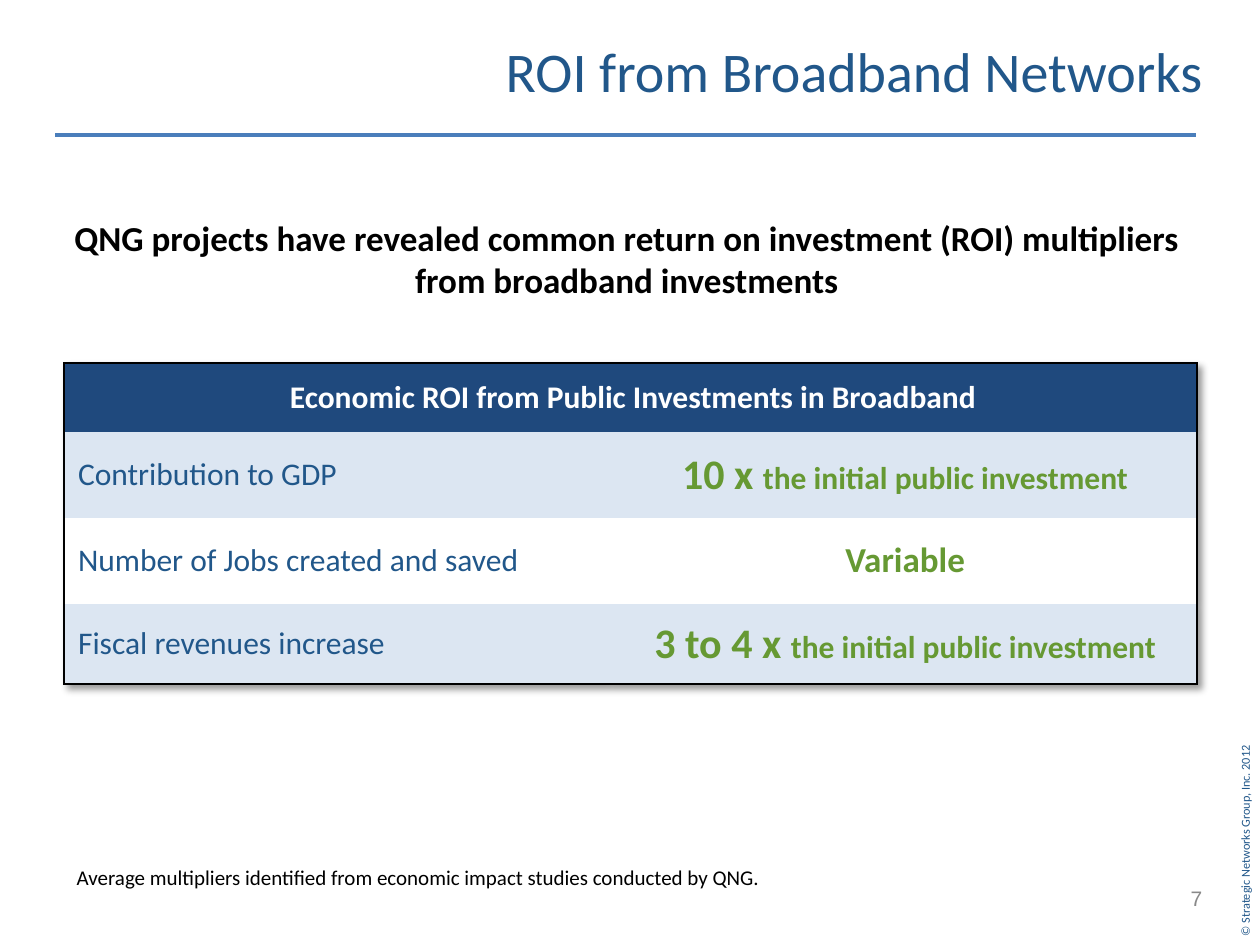
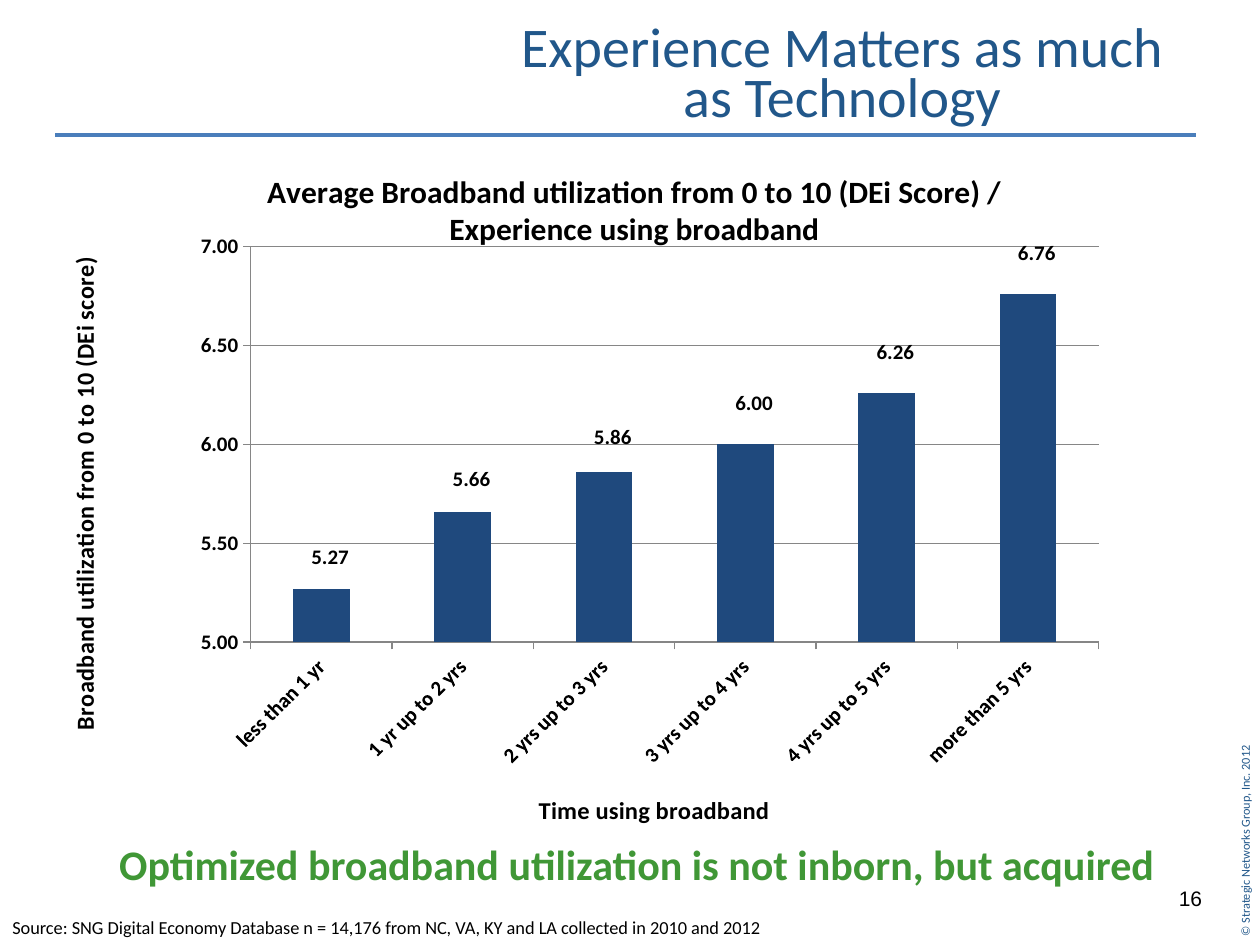
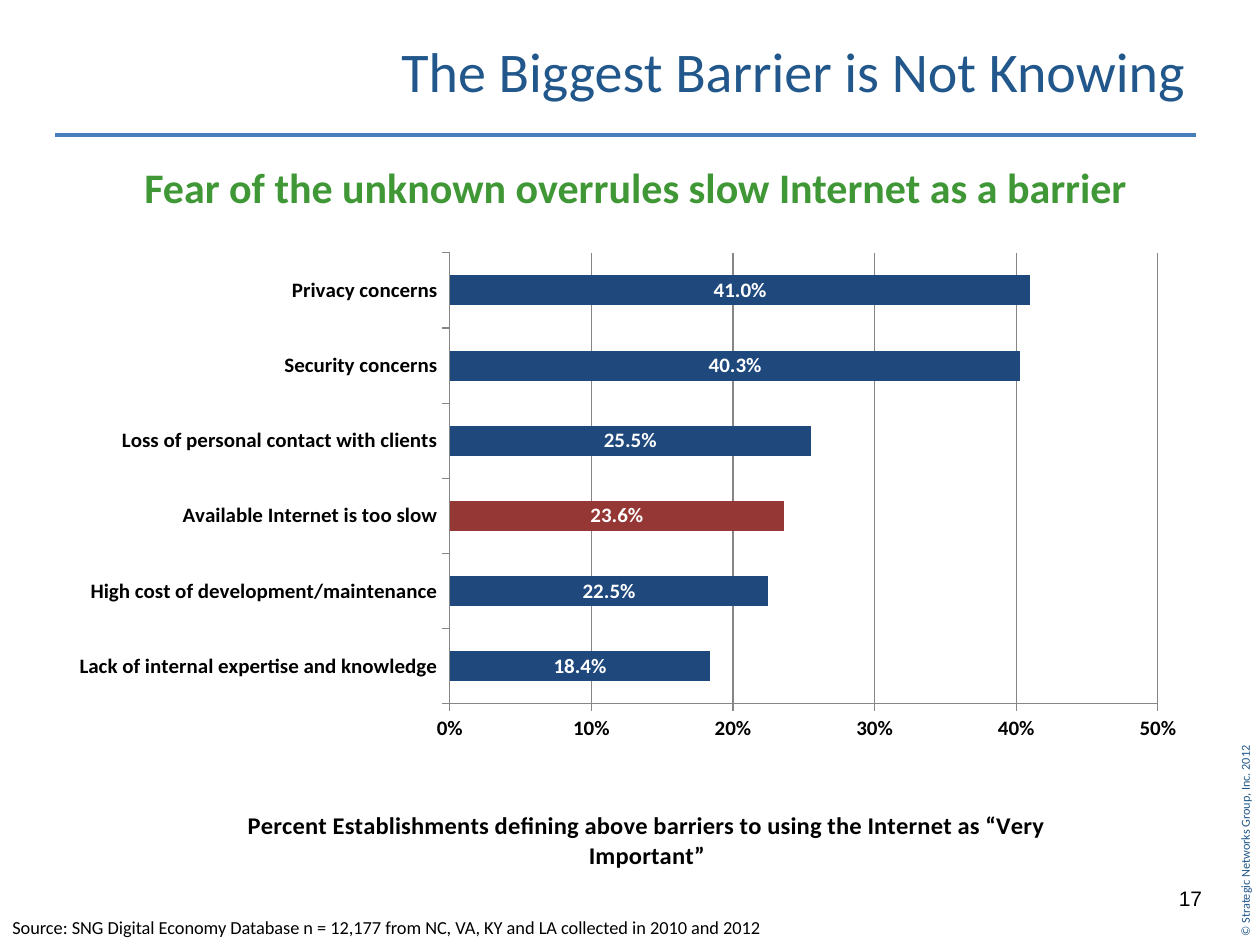
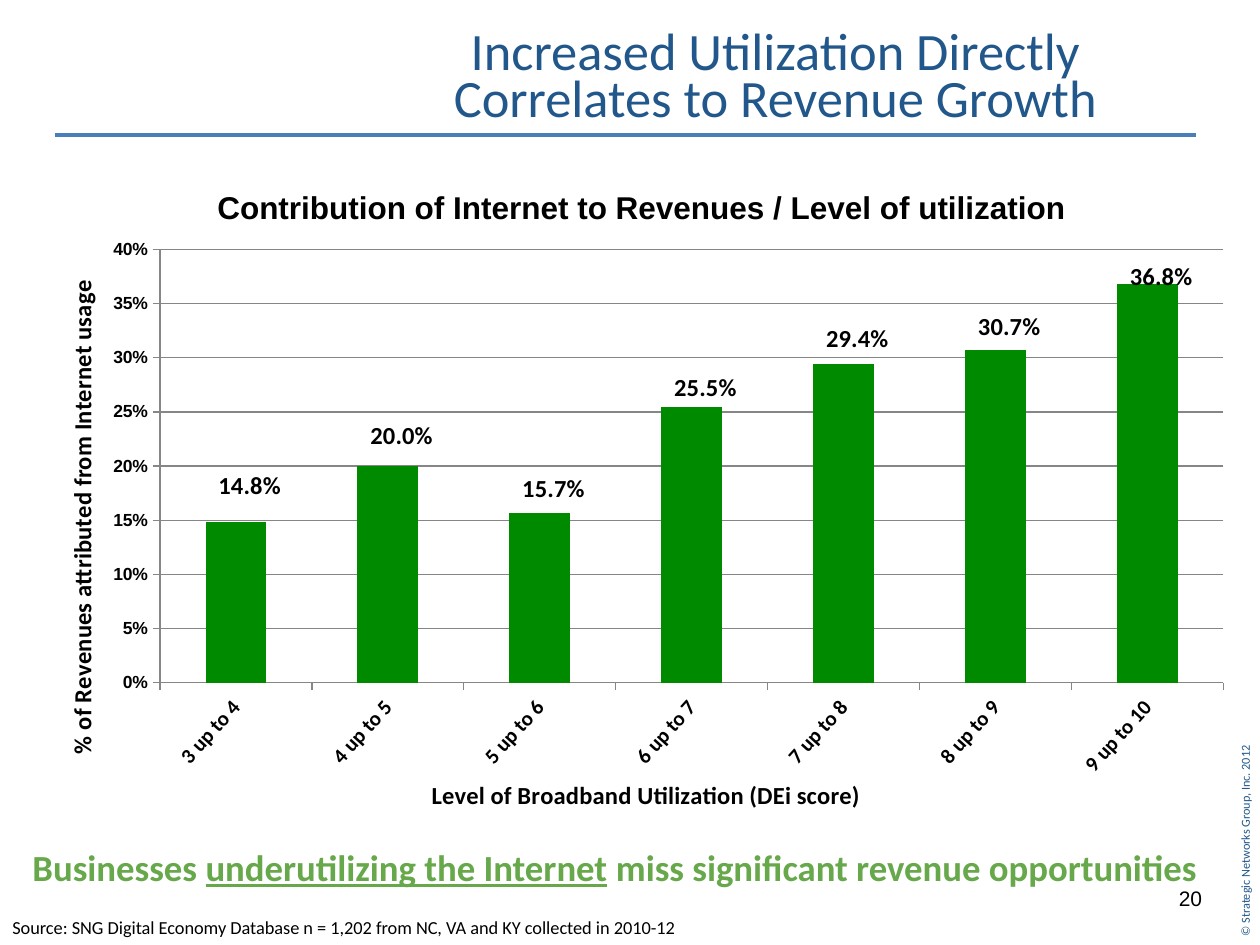
from dataclasses import dataclass

from lxml import etree
from pptx import Presentation
from pptx.chart.data import CategoryChartData
from pptx.dml.color import RGBColor
from pptx.enum.chart import XL_CHART_TYPE as ChartType
from pptx.enum.chart import XL_LABEL_POSITION as LabelPosition
from pptx.enum.chart import XL_TICK_MARK as TickMark
from pptx.enum.shapes import MSO_CONNECTOR as Connector
from pptx.enum.text import MSO_ANCHOR as Anchor
from pptx.enum.text import MSO_AUTO_SIZE as AutoSize
from pptx.enum.text import PP_ALIGN as Align
from pptx.oxml import parse_xml
from pptx.oxml.ns import nsdecls, qn
from pptx.util import Inches, Pt


@dataclass(frozen=True)
class Theme:
    font: str = "Calibri"
    plain_font: str = "Arial"
    title_blue: str = "21578A"
    rule_blue: str = "4A7EBB"
    navy: str = "1F497D"
    pale_blue: str = "DCE6F2"
    red: str = "953735"
    bar_green: str = "008A00"
    message_green: str = "409736"
    closing_green: str = "66A84A"
    value_green: str = "669933"
    page_grey: str = "898989"
    axis_grey: str = "868686"
    black: str = "000000"
    white: str = "FFFFFF"
    title: float = 32
    long_title: float = 30
    message: float = 24
    closing: float = 21
    lead: float = 20
    heading: float = 18
    axis_title: float = 14
    small: float = 12
    source: float = 10.5
    chart: float = 10
    copyright: float = 7


THEME = Theme()
NO_TABLE_STYLE = "{2D5ABB26-0587-4C30-8999-92F81FD0307C}"


@dataclass
class BarChartSpec:
    """Content of a bar chart; positions are inches inside the chart frame."""
    categories: tuple
    values: tuple
    color: str
    plot_area: tuple
    number_format: str
    axis_format: str
    axis_range: tuple
    value_title: str
    value_title_at: tuple
    category_title: str = ""
    category_title_at: tuple = ()
    title: str = ""
    title_at: tuple = ()
    title_font: str = THEME.font
    value_font: str = THEME.font
    value_size: float = THEME.small
    label_size: float = THEME.small
    label_color: str = THEME.black
    label_gaps: tuple = ()
    label_shift: float = 0
    label_angle: int = 0
    chart_type: int = ChartType.COLUMN_STACKED


def style_font(font, size, color, bold=False, name=THEME.font):
    font.size = Pt(size)
    font.name = name
    font.bold = bold
    font.color.rgb = RGBColor.from_string(color)


def place(shape, box):
    shape.left, shape.top, shape.width, shape.height = map(Inches, box)


def add_text(slide, box, lines, size, color=THEME.black, bold=False,
             align=Align.LEFT, spacing=None, name=THEME.font):
    """Add a box with one paragraph per line; a line may be a list of runs."""
    shape = slide.shapes.add_textbox(*map(Inches, box))
    frame = shape.text_frame
    frame.word_wrap = True
    for index, line in enumerate(lines):
        paragraph = frame.paragraphs[0] if index == 0 else frame.add_paragraph()
        for text in [line] if isinstance(line, str) else line:
            paragraph.add_run().text = text
        paragraph.alignment = align
        paragraph.line_spacing = spacing
        style_font(paragraph.font, size, color, bold, name)
    return shape


def add_shared_layout_parts(slide):
    """Put the title rule and the copyright line on the slide's layout."""
    rule = slide.shapes.add_connector(
        Connector.STRAIGHT, Inches(0.44), Inches(1.07), Inches(9.49), Inches(1.07))
    rule.line.color.rgb = RGBColor.from_string(THEME.rule_blue)
    rule.line.width = Pt(2.25)
    etree.SubElement(rule.element.spPr, qn("a:effectLst"))

    notice = add_text(slide, (8.99, 6.47, 1.78, 0.26),
                      ["© Strategic Networks Group, Inc. 2012"],
                      THEME.copyright, THEME.title_blue)
    notice.rotation = 270
    notice.text_frame.word_wrap = False
    notice.text_frame.vertical_anchor = Anchor.MIDDLE
    notice.text_frame.margin_left = Inches(0.06)
    for shape in (rule, notice):
        slide.slide_layout.shapes.element.append(shape.element)


def add_titled_slide(presentation, title, box, number, align=Align.RIGHT,
                     size=THEME.title, anchor=Anchor.MIDDLE,
                     number_color=THEME.black):
    slide = presentation.slides.add_slide(presentation.slide_layouts[5])
    shape = slide.shapes.title
    place(shape, box)
    frame = shape.text_frame
    frame.text = title
    frame.auto_size = AutoSize.NONE
    frame.vertical_anchor = anchor
    paragraph = frame.paragraphs[0]
    paragraph.alignment = align
    paragraph.line_spacing = 0.75
    style_font(paragraph.font, size, THEME.title_blue)
    add_text(slide, (8.61, 6.98, 1.03, 0.45), [str(number)], THEME.small,
             number_color, align=Align.RIGHT, name=THEME.plain_font)
    return slide


def add_message(slide, box, text):
    add_text(slide, box, [text], THEME.message, THEME.message_green, True,
             Align.CENTER, 0.85)


def add_source(slide, sample):
    add_text(slide, (0, 7.22, 7.57, 0.28),
             [f"Source: SNG Digital Economy Database {sample}"], THEME.source)


def set_borders(cell, sides):
    properties = cell._tc.get_or_add_tcPr()
    borders = [side for side in "LRTB" if side in sides]
    for index, side in enumerate(borders):
        properties.insert(index, parse_xml(
            f'<a:ln{side} {nsdecls("a")} w="12700"><a:solidFill>'
            f'<a:srgbClr val="{THEME.black}"/></a:solidFill></a:ln{side}>'))


def fill_cell(cell, runs, fill, color, bold, align, borders):
    """Write (text, size) runs into a table cell and style it."""
    cell.fill.solid()
    cell.fill.fore_color.rgb = RGBColor.from_string(fill)
    cell.vertical_anchor = Anchor.MIDDLE
    cell.margin_left = cell.margin_right = Inches(0.07)
    cell.margin_top = cell.margin_bottom = 0
    paragraph = cell.text_frame.paragraphs[0]
    paragraph._p.get_or_add_pPr().set("marL", str(Inches(0.04)))
    paragraph.alignment = align
    paragraph.space_after = Pt(2)
    for text, size in runs:
        run = paragraph.add_run()
        run.text = text
        style_font(run.font, size, color, bold)
    set_borders(cell, borders)


def add_roi_table(slide, box, heading, rows):
    table = slide.shapes.add_table(len(rows) + 1, 2, *map(Inches, box)).table
    properties = table._tbl.tblPr
    properties.find(qn("a:tableStyleId")).text = NO_TABLE_STYLE
    table.first_row = table.horz_banding = False
    properties.insert(0, parse_xml(
        f'<a:effectLst {nsdecls("a")}><a:outerShdw blurRad="50800" dist="38100" '
        'dir="2700000" algn="tl" rotWithShape="0"><a:prstClr val="black">'
        '<a:alpha val="40000"/></a:prstClr></a:outerShdw></a:effectLst>'))
    for column, width in zip(table.columns, (4.32, 4.67)):
        column.width = Inches(width)
    for row, height in zip(table.rows, (0.55, 0.68, 0.68, 0.64)):
        row.height = Inches(height)

    table.cell(0, 0).merge(table.cell(0, 1))
    fill_cell(table.cell(0, 0), [(heading, THEME.heading)], THEME.navy,
              THEME.white, True, Align.CENTER, "LRT")
    set_borders(table.cell(0, 1), "RT")
    for index, (label, runs) in enumerate(rows, 1):
        fill = THEME.pale_blue if index % 2 else THEME.white
        bottom = "B" if index == len(rows) else ""
        fill_cell(table.cell(index, 0), [(label, THEME.heading)], fill,
                  THEME.title_blue, False, Align.LEFT, "L" + bottom)
        fill_cell(table.cell(index, 1), runs, fill, THEME.value_green, True,
                  Align.CENTER, "R" + bottom)


def manual_layout(position, box, inner=False, offset=False):
    """Make a c:layout from inches (x, y) or (x, y, width, height) in the box."""
    parts = ['<c:layoutTarget val="inner"/>'] if inner else []
    if not offset:
        parts += ['<c:xMode val="edge"/>', '<c:yMode val="edge"/>']
    parts += [f'<c:{key} val="{length / whole:.4f}"/>'
              for key, length, whole in zip("xywh", position, box[2:] * 2)]
    return parse_xml(f'<c:layout {nsdecls("c")}><c:manualLayout>{"".join(parts)}'
                     '</c:manualLayout></c:layout>')


def set_chart_title(title, text, position, box, size, name=THEME.font):
    """Fill a chart or axis title and put its top left corner at position."""
    title.text_frame.text = text
    for paragraph in title.text_frame.paragraphs:
        style_font(paragraph.font, size, THEME.black, True, name)
    element = title._element
    for layout in element.findall(qn("c:layout")):
        element.remove(layout)
    element.find(qn("c:tx")).addnext(manual_layout(position, box))


def style_axis(axis, size, name):
    axis.major_tick_mark = TickMark.OUTSIDE
    style_font(axis.tick_labels.font, size, THEME.black, True, name)
    lines = [axis.format.line]
    if axis.has_major_gridlines:
        lines.append(axis.major_gridlines.format.line)
    for line in lines:
        line.color.rgb = RGBColor.from_string(THEME.axis_grey)
        line.width = Pt(0.75)


def hide_leader_lines(labels):
    """Switch off the lines from moved labels to their bars."""
    element = labels._element
    for old in element.findall(qn("c:showLeaderLines")):
        element.remove(old)
    element.append(parse_xml(f'<c:showLeaderLines {nsdecls("c")} val="0"/>'))
    element.append(parse_xml(
        f'<c:extLst {nsdecls("c")}><c:ext uri="{{CE6537A1-D6FC-4f65-9D91-7224C49458BB}}" '
        'xmlns:c15="http://schemas.microsoft.com/office/drawing/2012/chart">'
        '<c15:showLeaderLines val="0"/></c:ext></c:extLst>'))


def lift_labels(series, spec, box):
    """Move each label from the middle of its bar to its gap above the bar."""
    low, high, _ = spec.axis_range
    for index, (value, gap) in enumerate(zip(spec.values, spec.label_gaps)):
        label = series.points[index].data_label
        label.position = LabelPosition.CENTER
        style_font(label.font, spec.label_size, spec.label_color, True)
        half_bar = (value - low) / (high - low) * spec.plot_area[3] / 2
        offset = (spec.label_shift, -half_bar - gap)
        element = series.data_labels._element.findall(qn("c:dLbl"))[index]
        element.find(qn("c:idx")).addnext(manual_layout(offset, box, offset=True))


def add_bar_chart(slide, box, spec):
    data = CategoryChartData()
    data.categories = spec.categories
    data.add_series("Series 1", spec.values)
    chart = slide.shapes.add_chart(spec.chart_type, *map(Inches, box), data).chart
    chart.has_legend = False
    style_font(chart.font, THEME.chart, THEME.black, name=THEME.plain_font)
    chart.has_title = bool(spec.title)
    if spec.title:
        set_chart_title(chart.chart_title, spec.title, spec.title_at, box,
                        THEME.heading, spec.title_font)

    plot = chart.plots[0]
    plot.gap_width, plot.overlap = 150, 100
    plot.vary_by_categories = False
    plot_area = plot._element.getparent()
    for layout in plot_area.findall(qn("c:layout")):
        plot_area.remove(layout)
    plot_area.insert(0, manual_layout(spec.plot_area, box, inner=True))

    value_axis, category_axis = chart.value_axis, chart.category_axis
    value_axis.minimum_scale, value_axis.maximum_scale, value_axis.major_unit = spec.axis_range
    value_axis.has_major_gridlines = True
    value_axis.tick_labels.number_format = spec.axis_format
    value_axis.tick_labels.number_format_is_linked = False
    style_axis(value_axis, spec.value_size, spec.value_font)
    style_axis(category_axis, THEME.small, THEME.font)
    set_chart_title(value_axis.axis_title, spec.value_title, spec.value_title_at,
                    box, THEME.axis_title)
    if spec.category_title:
        set_chart_title(category_axis.axis_title, spec.category_title,
                        spec.category_title_at, box, THEME.axis_title)
    if spec.label_angle:
        body = category_axis._element.find(qn("c:txPr")).find(qn("a:bodyPr"))
        body.set("rot", str(spec.label_angle * 60000))
        body.set("vert", "horz")

    series = plot.series[0]
    series.format.fill.solid()
    series.format.fill.fore_color.rgb = RGBColor.from_string(spec.color)
    labels = series.data_labels
    labels.show_value = True
    labels.number_format = spec.number_format
    labels.number_format_is_linked = False
    style_font(labels.font, spec.label_size, spec.label_color, True)
    lift_labels(series, spec, box)
    hide_leader_lines(labels)
    return chart


def add_roi_slide(presentation):
    slide = add_titled_slide(presentation, "ROI from Broadband Networks",
                             (2.59, 0.26, 7.06, 0.71), 7,
                             number_color=THEME.page_grey)
    add_shared_layout_parts(slide)
    add_text(slide, (0.41, 1.67, 9.13, 0.77),
             ["QNG projects have revealed common return on investment (ROI) multipliers",
              "from broadband investments"], THEME.lead, bold=True, align=Align.CENTER)
    investment = ("the initial public investment", THEME.heading)
    add_roi_table(slide, (0.51, 2.88, 8.99, 2.55),
                  "Economic ROI from Public Investments in Broadband", [
                      ("Contribution to GDP", [("10 x ", THEME.message), investment]),
                      ("Number of Jobs created and saved", [("Variable", THEME.lead)]),
                      ("Fiscal revenues increase", [("3 to 4 x ", THEME.message), investment]),
                  ])
    add_text(slide, (0.51, 6.81, 6.72, 0.3),
             ["Average multipliers identified from economic impact studies conducted by QNG."],
             THEME.small)


def add_experience_slide(presentation):
    slide = add_titled_slide(presentation, "Experience Matters as much as Technology",
                             (3.87, 0.26, 5.63, 0.71), 16, Align.CENTER)
    add_bar_chart(slide, (0.46, 1.16, 9.2, 5.45), BarChartSpec(
        categories=("less than 1 yr", "1 yr up to 2 yrs", "2 yrs up to 3 yrs",
                    "3 yrs up to 4 yrs", "4 yrs up to 5 yrs", "more than 5 yrs"),
        values=(5.27, 5.66, 5.86, 6, 6.26, 6.76),
        color=THEME.navy,
        plot_area=(1.53, 0.81, 6.73, 3.19),
        number_format="#0.00", axis_format="#0.00", axis_range=(5, 7, 0.5),
        title="Average Broadband utilization from 0 to 10 (DEi Score) /\n"
              "Experience using broadband",
        title_at=(1.63, 0.17),
        value_title="Broadband utilization from 0 to 10 (DEi score)",
        value_title_at=(0.04, 0.92),
        category_title="Time using broadband", category_title_at=(3.78, 5.18),
        label_gaps=(0.25, 0.26, 0.28, 0.33, 0.33, 0.33), label_shift=0.07,
        label_angle=-45))
    add_source(slide, "n = 14,176 from NC, VA, KY and LA collected in 2010 and 2012")
    add_message(slide, (0.46, 6.67, 9.19, 0.59),
                "Optimized broadband utilization is not inborn, but acquired")


def add_barrier_slide(presentation):
    slide = add_titled_slide(presentation, "The Biggest Barrier is Not Knowing",
                             (2.65, 0.26, 6.86, 0.71), 17)
    categories = ("Lack of internal expertise and knowledge",
                  "High cost of development/maintenance",
                  "Available Internet is too slow",
                  "Loss of personal contact with clients",
                  "Security concerns", "Privacy concerns")
    chart = add_bar_chart(slide, (0.45, 1.91, 9.06, 5.06), BarChartSpec(
        categories=categories,
        values=(0.184, 0.225, 0.236, 0.255, 0.403, 0.41),
        color=THEME.navy,
        plot_area=(3.12, 0.1, 5.62, 3.66),
        number_format="0.0%", axis_format="0%", axis_range=(0, 0.5, 0.1),
        value_title="Percent Establishments defining above barriers to using "
                    "the Internet as “Very Important”",
        value_title_at=(1.48, 4.58),
        label_color=THEME.white, chart_type=ChartType.BAR_STACKED))
    slow_internet = chart.plots[0].series[0].points[
        categories.index("Available Internet is too slow")]
    slow_internet.format.fill.solid()
    slow_internet.format.fill.fore_color.rgb = RGBColor.from_string(THEME.red)
    add_source(slide, "n = 12,177 from NC, VA, KY and LA collected in 2010 and 2012")
    add_message(slide, (0.45, 1.29, 9.19, 0.98),
                "Fear of the unknown overrules slow Internet as a barrier")


def add_revenue_slide(presentation):
    slide = add_titled_slide(
        presentation, "Increased Utilization Directly\vCorrelates to Revenue Growth",
        (2.81, 0.21, 6.69, 0.71), 20, Align.CENTER, THEME.long_title, Anchor.TOP)
    add_bar_chart(slide, (0.47, 1.28, 9.25, 5.59), BarChartSpec(
        categories=[f"{score} up to {score + 1}" for score in range(3, 10)],
        values=(0.148, 0.2, 0.157, 0.255, 0.294, 0.307, 0.368),
        color=THEME.bar_green,
        plot_area=(0.8, 0.7, 8.44, 3.44),
        number_format="#0.0%", axis_format="0%", axis_range=(0, 0.4, 0.05),
        title="Contribution of Internet to Revenues / Level of utilization",
        title_at=(1.21, 0.16), title_font=THEME.plain_font,
        value_title="% of Revenues attributed from Internet usage",
        value_title_at=(0.01, 0.91),
        category_title="Level of Broadband Utilization (DEi score)",
        category_title_at=(2.92, 4.86),
        value_font=THEME.plain_font, value_size=THEME.chart,
        label_size=THEME.axis_title,
        label_gaps=(0.29, 0.24, 0.19, 0.15, 0.2, 0.18, 0.06), label_shift=0.11,
        label_angle=-48))
    closing = add_text(slide, (0.16, 6.71, 9.56, 0.53),
                       [["Businesses ", "underutilizing the Internet",
                         " miss significant revenue opportunities"]],
                       THEME.closing, THEME.closing_green, True, spacing=0.85)
    closing.text_frame.paragraphs[0].runs[1].font.underline = True
    add_source(slide, "n = 1,202 from NC, VA and KY collected in 2010-12")


def main():
    presentation = Presentation()
    presentation.slide_width, presentation.slide_height = Inches(10), Inches(7.5)
    add_roi_slide(presentation)
    add_experience_slide(presentation)
    add_barrier_slide(presentation)
    add_revenue_slide(presentation)
    presentation.save("out.pptx")


if __name__ == "__main__":
    main()
